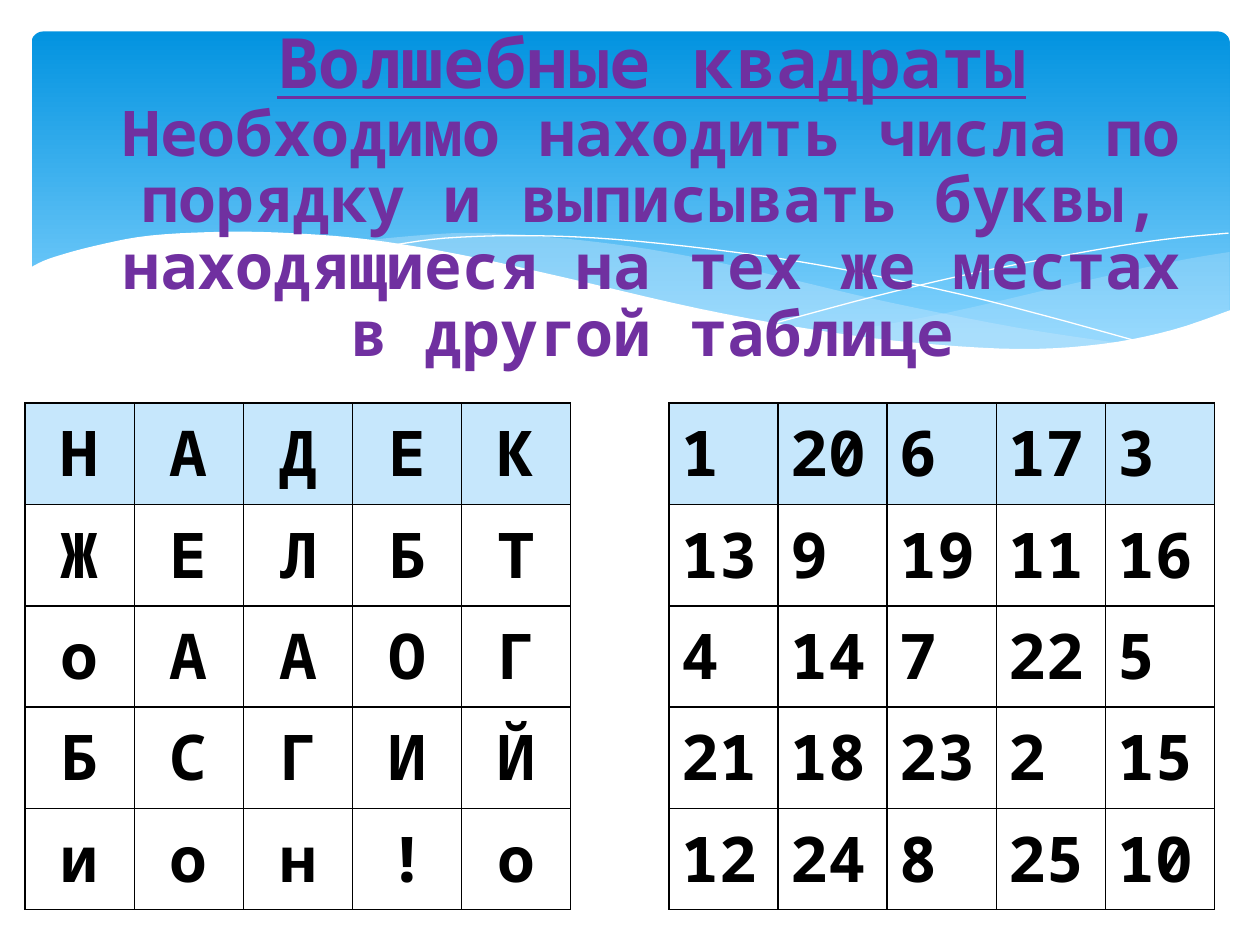
import lxml.etree
import pptx
import pptx.dml.color
import pptx.enum.shapes
import pptx.enum.text
import pptx.oxml
import pptx.oxml.ns
import pptx.util

Inches = pptx.util.Inches
Pt = pptx.util.Pt
ALIGN = pptx.enum.text.PP_ALIGN
FONT = "Noto Sans Mono"
PURPLE, BLACK, WHITE, PALE = "7030A0", "000000", "FFFFFF", "C6E7FC"

LETTERS = ["НАДЕК", "ЖЕЛБТ", "оААОГ", "БСГИЙ", "ион!о"]
NUMBERS = [
    [1, 20, 6, 17, 3],
    [13, 9, 19, 11, 16],
    [4, 14, 7, 22, 5],
    [21, 18, 23, 2, 15],
    [12, 24, 8, 25, 10],
]

# Each edge is a list of knots in inches, joined by a smooth curve.
RIGHT_WAVE = [
    [(9.76, 2), (9.35, 2.07), (8.61, 2.23), (7.53, 2.48), (6.61, 2.65)],
    [(6.61, 2.65), (7.19, 2.72), (7.69, 2.77), (8.14, 2.78), (8.63, 2.75),
     (9.13, 2.67), (9.49, 2.57), (9.76, 2.47)],
]
MIDDLE_WAVE = [
    [(8.93, 2.73), (8.07, 2.6), (7.06, 2.4), (6.29, 2.22), (5.55, 2.05),
     (4.89, 1.94), (4.2, 1.87), (3.61, 1.85), (2.86, 1.91)],
    [(2.86, 1.91), (3.62, 2.03), (4.49, 2.22), (5.3, 2.4), (6.18, 2.58),
     (6.95, 2.7), (7.61, 2.77), (8.28, 2.78), (8.93, 2.73)],
]
FALLING_LINE = [[(3.09, 1.95), (3.53, 1.89), (4.16, 1.87), (4.89, 1.9), (5.82, 2),
                 (6.65, 2.13), (7.6, 2.33), (8.31, 2.51), (9.07, 2.72)]]
RISING_LINE = [[(6.13, 2.57), (6.95, 2.35), (7.76, 2.16), (8.66, 1.99),
                (9.24, 1.9), (9.75, 1.85)]]
WHITE_WAVE = [
    [(9.77, 2.46), (9.3, 2.62), (8.75, 2.73), (8.09, 2.77), (7.26, 2.72),
     (6.48, 2.62), (5.55, 2.45), (4.47, 2.2), (3.65, 2.02), (2.92, 1.9),
     (2.3, 1.85), (1.77, 1.84), (1.19, 1.87), (0.76, 1.95), (0.4, 2.05), (0.23, 2.13)],
    [(0.23, 3.29)],
    [(9.77, 3.29)],
]


def color(text):
    return pptx.dml.color.RGBColor.from_string(text)


def smooth(knots, steps=5):
    """Points of a Catmull-Rom curve through the knots."""
    padded = [knots[0], *knots, knots[-1]]
    points = [knots[0]]
    for a, b, c, d in zip(padded, padded[1:], padded[2:], padded[3:]):
        for step in range(1, steps + 1):
            t = step / steps
            points.append(tuple(
                (2 * q + (r - p) * t + (2 * p - 5 * q + 4 * r - s) * t**2
                 + (3 * q - p - 3 * r + s) * t**3) / 2
                for p, q, r, s in zip(a, b, c, d)))
    return points


def format_span(span, **values):
    values = {"name": FONT, "bold": True, **values}
    span.font.color.rgb = color(values.pop("color", BLACK))
    for name, value in values.items():
        setattr(span.font, name, value)


class SlideBuilder:
    def __init__(self, deck):
        self.page = deck.slides.add_slide(deck.slide_layouts[5])
        self.shapes = self.page.shapes

    def banner(self, left, top, width, height, upper, lower):
        box = self.shapes.add_shape(
            pptx.enum.shapes.MSO_SHAPE.ROUNDED_RECTANGLE,
            *map(Inches, (left, top, width, height)))
        box.adjustments[0] = 0.034
        box.shadow.inherit = False
        box.line.fill.background()
        box.fill.gradient()
        box.fill.gradient_angle = 270
        for stop, place, tint in zip(box.fill.gradient_stops, (0, 0.9), (upper, lower)):
            stop.position = place
            stop.color.rgb = color(tint)

    def wave(self, edges, fill=None, opacity=100):
        """A filled outline, or a thin white curve when there is no fill."""
        points = [(Inches(x), Inches(y)) for edge in edges for x, y in smooth(edge)]
        builder = self.shapes.build_freeform(*points[0])
        builder.add_line_segments(points[1:], close=fill is not None)
        curve = builder.convert_to_shape()
        curve.shadow.inherit = False
        if fill is None:
            curve.fill.background()
            curve.line.color.rgb = color(WHITE)
            curve.line.width = Pt(0)
            return
        curve.line.fill.background()
        curve.fill.solid()
        curve.fill.fore_color.rgb = color(fill)
        if opacity < 100:
            tint = next(curve.element.iter(pptx.oxml.ns.qn("a:srgbClr")))
            alpha = lxml.etree.SubElement(tint, pptx.oxml.ns.qn("a:alpha"))
            alpha.set("val", str(opacity * 1000))

    def title(self, heading, body, left, top, width, height):
        box = self.shapes.title
        self.shapes.element.append(box.element)  # in front of the waves
        place = {"left": left, "top": top, "width": width, "height": height}
        for name, value in place.items():
            setattr(box, name, Inches(value))
        frame = box.text_frame
        frame.word_wrap = True
        frame.auto_size = pptx.enum.text.MSO_AUTO_SIZE.NONE
        frame.vertical_anchor = pptx.enum.text.MSO_ANCHOR.MIDDLE
        para = frame.paragraphs[0]
        para.alignment = ALIGN.CENTER
        para.line_spacing = 0.88
        for text, size, underline in ((heading, 39.6, True), (body, 36, False)):
            if para.runs:
                para.add_line_break()
            span = para.add_run()
            span.text = text
            format_span(span, size=Pt(size), underline=underline, color=PURPLE)

    def cell_borders(self, cell):
        properties = cell._tc.get_or_add_tcPr()
        for side in "LRTB":
            properties.append(pptx.oxml.parse_xml(
                f'<a:ln{side} {pptx.oxml.ns.nsdecls("a")} w="12700"><a:solidFill>'
                f'<a:srgbClr val="{BLACK}"/></a:solidFill></a:ln{side}>'))

    def square(self, rows, left, top, size, alignment):
        table = self.shapes.add_table(
            len(rows), len(rows[0]), *map(Inches, (left, top, *size))).table
        for y, row in enumerate(rows):
            for x, value in enumerate(row):
                cell = table.cell(y, x)
                self.cell_borders(cell)
                cell.fill.solid()
                cell.fill.fore_color.rgb = color(WHITE if y else PALE)
                para = cell.text_frame.paragraphs[0]
                para.alignment = alignment
                span = para.add_run()
                span.text = str(value)
                format_span(span, size=Pt(36))


def main():
    deck = pptx.Presentation()
    deck.slide_width, deck.slide_height = Inches(10), Inches(7.5)
    slide = SlideBuilder(deck)
    slide.banner(0.25, 0.25, 9.51, 2.7, "0293E0", "83D3FE")
    slide.wave(RIGHT_WAVE, PALE, 29)
    slide.wave(MIDDLE_WAVE, PALE, 40)
    slide.wave(FALLING_LINE)
    slide.wave(RISING_LINE)
    slide.wave(WHITE_WAVE, WHITE)
    square_size = (4.33, 4.02)
    slide.square(LETTERS, 0.2, 3.2, square_size, ALIGN.CENTER)
    slide.title(
        "Волшебные квадраты",
        "Необходимо находить числа по порядку и выписывать буквы, "
        "находящиеся на тех же местах в другой таблице",
        0.67, 0.06, 9, 3.05)
    slide.square(NUMBERS, 5.31, 3.2, square_size, ALIGN.LEFT)
    deck.save("out.pptx")


if __name__ == "__main__":
    main()
